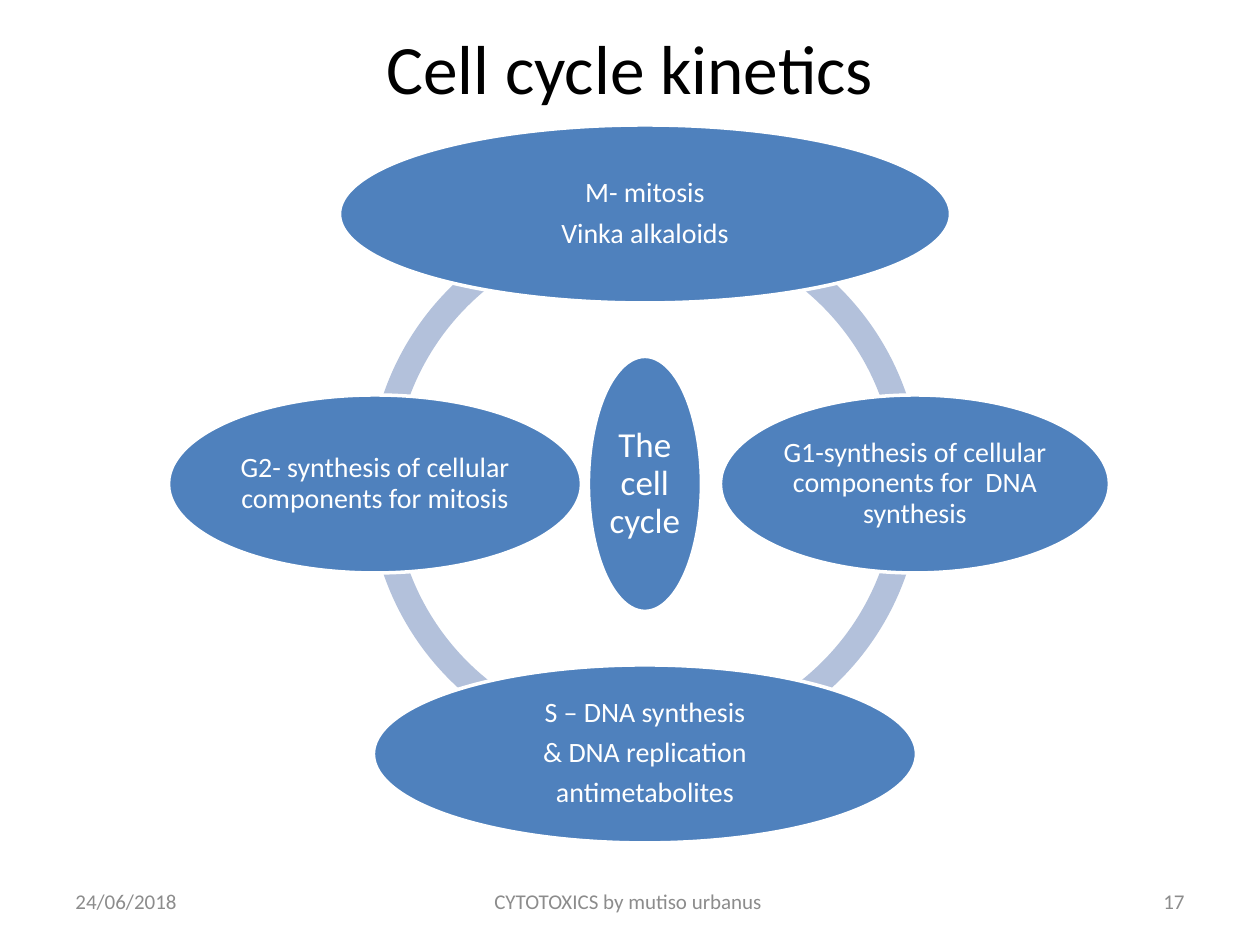
from pptx import Presentation
from pptx.dml.color import RGBColor
from pptx.enum.shapes import MSO_SHAPE
from pptx.enum.text import MSO_ANCHOR, PP_ALIGN
from pptx.util import Pt

PX = 914400 // 126  # EMU in one px
WHITE = RGBColor(0xFF, 0xFF, 0xFF)
BLACK = RGBColor(0, 0, 0)
BLUE = RGBColor(0x4F, 0x81, 0xBD)
PALE = RGBColor(0xB3, 0xC1, 0xDB)
GREY = RGBColor(0x8C, 0x8C, 0x8C)

# Content
TITLE = "Cell cycle kinetics"
HUB = ["The cell cycle"]
# Each phase: direction from the hub (x, y), width, lines
PHASES = [
    (0, -1, 611, ["M- mitosis", "Vinka alkaloids"]),
    (1, 0, 389, ["G1-synthesis of cellular components for  DNA synthesis"]),
    (0, 1, 543, ["S – DNA synthesis", "& DNA replication", "antimetabolites"]),
    (-1, 0, 413, ["G2- synthesis of cellular components for mitosis"]),
]
# Each footer part: left, width, alignment, text
FOOTER = [
    (63, 294, PP_ALIGN.LEFT, "24/06/2018"),
    (431, 399, PP_ALIGN.CENTER, "CYTOTOXICS by mutiso urbanus "),
    (903, 294, PP_ALIGN.RIGHT, "17"),
]

# Layout
MID_X, MID_Y = 645, 484
REACH = 270  # hub centre to phase centre
RING = 553
TALL = 178
ARCS = [(108, 162), (54, 108), (0, 54), (162, 0)]
BAND = 0.046


def box(x, y, w, h):
    return [n * PX for n in (x, y, w, h)]


def around(x, y, w, h):
    return box(x - w / 2, y - h / 2, w, h)


def put(obj, form):
    for name, value in form.items():
        setattr(obj, name, value)


def write(frame, lines, size, color, align, **form):
    put(frame, dict(word_wrap=True, vertical_anchor=MSO_ANCHOR.MIDDLE, **form))
    for i, line in enumerate(lines):
        par = frame.paragraphs[0] if i == 0 else frame.add_paragraph()
        par.alignment = align
        run = par.add_run()
        run.text = line
        put(run.font, {"name": "Calibri", "size": Pt(size)})
        run.font.color.rgb = color


def draw(kind, place, fill):
    shape = slide.shapes.add_shape(kind, *map(int, place))
    shape.shadow.inherit = False
    shape.fill.solid()
    shape.fill.fore_color.rgb = fill
    shape.line.fill.background()
    return shape


def bubble(place, lines, size):
    shape = draw(MSO_SHAPE.OVAL, place, BLUE)
    shape.line.color.rgb = WHITE
    shape.line.width = Pt(2)
    sides = ("left", "right", "top", "bottom")
    inset = {f"margin_{side}": 3 * PX for side in sides}
    write(shape.text_frame, lines, size, WHITE, PP_ALIGN.CENTER, **inset)
    pars = shape.text_frame.paragraphs
    for par in pars:
        par.line_spacing = 0.9
    for par in pars[:-1]:
        par.space_after = Pt(size * 0.35)


deck = Presentation()
put(deck, {"slide_width": 1260 * PX, "slide_height": 945 * PX})
slide = deck.slides.add_slide(deck.slide_layouts[5])

# Title
title = slide.shapes.title
put(title, dict(zip(("left", "top", "width", "height"), box(63, 38, 1134, 58))))
write(title.text_frame, [TITLE], 39.6, BLACK, PP_ALIGN.CENTER)

# Ring of four arcs
for start, end in ARCS:
    arc = draw(MSO_SHAPE.BLOCK_ARC, around(MID_X, MID_Y, RING, RING), PALE)
    for i, value in enumerate((start, end, BAND)):
        arc.adjustments[i] = value

# Hub and phases
bubble(around(MID_X, MID_Y, 113, 255), HUB, 20)
for dx, dy, wide, lines in PHASES:
    bubble(around(MID_X + dx * REACH, MID_Y + dy * REACH, wide, TALL), lines, 16)

# Footer
for left, wide, align, text in FOOTER:
    note = slide.shapes.add_textbox(*box(left, 876, wide, 50))
    write(note.text_frame, [text], 12, GREY, align)

deck.save("out.pptx")
